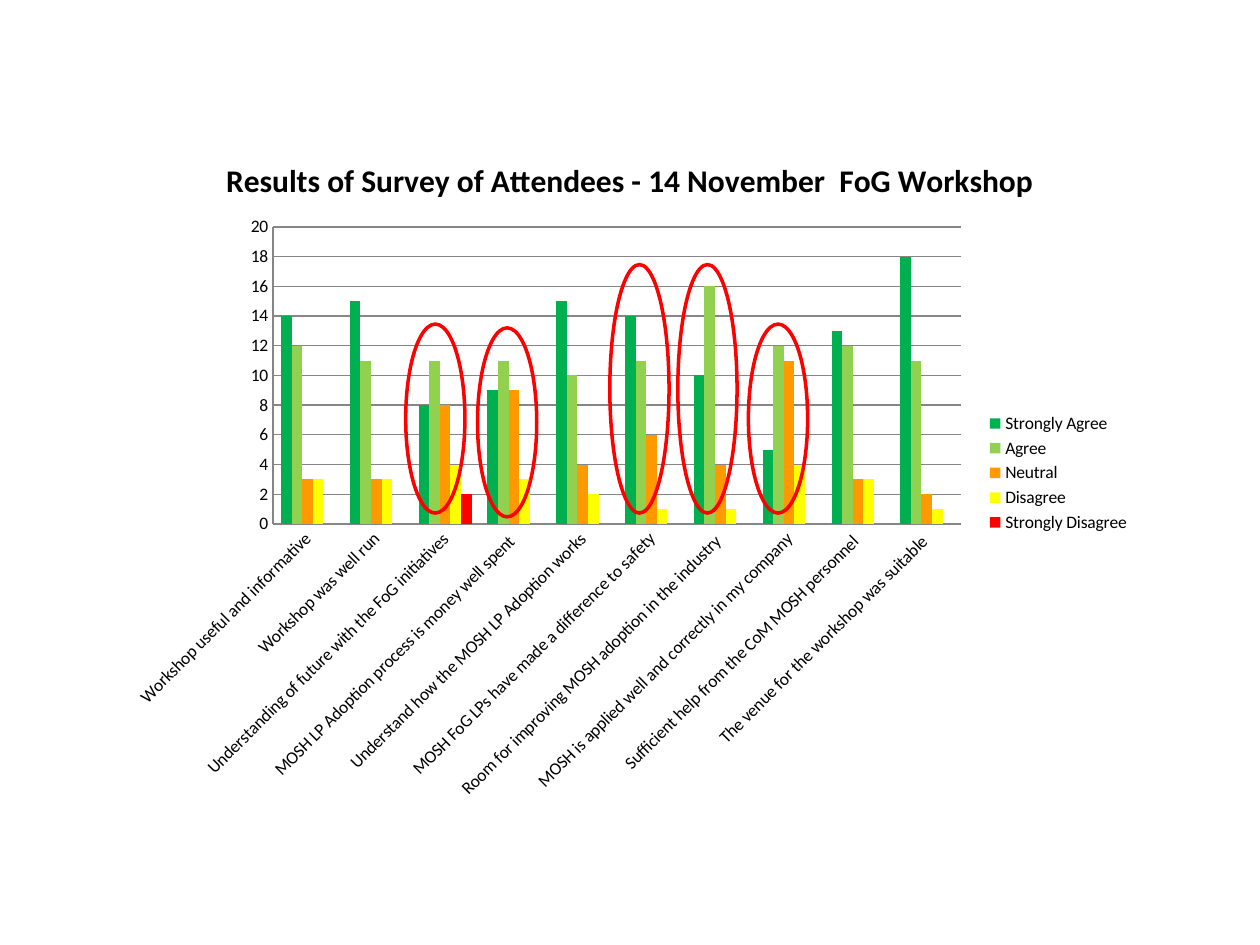
from dataclasses import dataclass

from lxml import etree
from pptx import Presentation
from pptx.chart.data import CategoryChartData
from pptx.dml.color import RGBColor
from pptx.enum import chart as charts, shapes
from pptx.oxml import ns
from pptx.util import Inches, Pt

WIDTH, HEIGHT = Inches(10), Inches(7.5)
FONT = "Calibri"
BLACK = RGBColor(0x00, 0x00, 0x00)
GREY = RGBColor(0x86, 0x86, 0x86)
DARK_GREEN = RGBColor(0x00, 0xB0, 0x50)
LIGHT_GREEN = RGBColor(0x92, 0xD0, 0x50)
ORANGE = RGBColor(0xFF, 0x99, 0x00)
YELLOW = RGBColor(0xFF, 0xFF, 0x00)
RED = RGBColor(0xFF, 0x00, 0x00)


@dataclass(frozen=True)
class Box:
    left: float
    top: float
    width: float
    height: float

    def on_slide(self) -> tuple[int, int, int, int]:
        return (int(self.left * WIDTH), int(self.top * HEIGHT),
                int(self.width * WIDTH), int(self.height * HEIGHT))


@dataclass(frozen=True)
class Answer:
    name: str
    color: RGBColor
    counts: tuple


CHART_BOX = Box(0.093, 0.14, 0.814, 0.721)
PLOT_BOX = Box(0.152, 0.139, 0.671, 0.436)
TITLE = "Results of Survey of Attendees - 14 November  FoG Workshop"
QUESTIONS = (
    "Workshop useful and informative",
    "Workshop was well run",
    "Understanding of future with the FoG initiatives",
    "MOSH LP Adoption process is money well spent ",
    "Understand how the MOSH LP Adoption works",
    "MOSH FoG LPs have made a difference to safety",
    "Room for improving MOSH adoption in the industry ",
    "MOSH is applied well and correctly in my company",
    "Sufficient help from the CoM MOSH personnel ",
    "The venue for the workshop was suitable ",
)
ANSWERS = (
    Answer("Strongly Agree", DARK_GREEN, (14, 15, 8, 9, 15, 14, 10, 5, 13, 18)),
    Answer("Agree", LIGHT_GREEN, (12, 11, 11, 11, 10, 11, 16, 12, 12, 11)),
    Answer("Neutral", ORANGE, (3, 3, 8, 9, 4, 6, 4, 11, 3, 2)),
    Answer("Disagree", YELLOW, (3, 3, 4, 3, 2, 1, 1, 4, 3, 1)),
    Answer("Strongly Disagree", RED, (None, None, 2) + (None,) * 7),
)
SHORT, TALL, RING_WIDTH = 0.2, 0.263, 0.047
RINGS = (
    Box(0.322, 0.343, RING_WIDTH, SHORT),
    Box(0.379, 0.347, RING_WIDTH, SHORT),
    Box(0.538, 0.28, RING_WIDTH, TALL),
    Box(0.594, 0.343, RING_WIDTH, SHORT),
    Box(0.484, 0.28, RING_WIDTH, TALL),
)


def format_font(font, *, size: float = 10, bold: bool = False) -> None:
    font.name = FONT
    font.size = Pt(size)
    font.bold = bold
    font.color.rgb = BLACK


def write_text(frame, content: str, **style) -> None:
    run = frame.paragraphs[0].add_run()
    run.text = content
    format_font(run.font, **style)


def place_plot(chart, box: Box) -> None:
    plot_area = chart.element.find(".//" + ns.qn("c:plotArea"))
    for layout in plot_area.findall(ns.qn("c:layout")):
        plot_area.remove(layout)
    layout = etree.Element(ns.qn("c:layout"))
    manual = etree.SubElement(layout, ns.qn("c:manualLayout"))
    settings = (("layoutTarget", "inner"), ("xMode", "edge"), ("yMode", "edge"),
                ("x", box.left), ("y", box.top), ("w", box.width), ("h", box.height))
    for name, value in settings:
        etree.SubElement(manual, ns.qn(f"c:{name}")).set("val", str(value))
    plot_area.insert(0, layout)


def format_axes(chart) -> None:
    for axis in (chart.category_axis, chart.value_axis):
        axis.major_tick_mark = charts.XL_TICK_MARK.NONE
        axis.minor_tick_mark = charts.XL_TICK_MARK.NONE
        axis.format.line.color.rgb = GREY
        axis.format.line.width = Pt(0.75)
        format_font(axis.tick_labels.font)
    labels = chart.category_axis._element.find(
        f"{ns.qn('c:txPr')}/{ns.qn('a:bodyPr')}")
    labels.set("rot", str(-45 * 60000))
    labels.set("vert", "horz")
    values = chart.value_axis
    values.minimum_scale, values.maximum_scale, values.major_unit = 0, 20, 2
    values.has_major_gridlines = True
    values.major_gridlines.format.line.color.rgb = GREY
    values.major_gridlines.format.line.width = Pt(0.75)


def add_survey_chart(slide) -> None:
    data = CategoryChartData(number_format="General")
    data.categories = QUESTIONS
    for answer in ANSWERS:
        data.add_series(answer.name, answer.counts)
    chart = slide.shapes.add_chart(
        charts.XL_CHART_TYPE.COLUMN_CLUSTERED, *CHART_BOX.on_slide(), data).chart
    format_font(chart.font)
    chart.has_title = True
    write_text(chart.chart_title.text_frame, TITLE, size=18, bold=True)
    chart.chart_title.include_in_layout = False
    chart.has_legend = True
    chart.legend.position = charts.XL_LEGEND_POSITION.RIGHT
    chart.legend.include_in_layout = False
    format_font(chart.legend.font)
    plot = chart.plots[0]
    plot.vary_by_categories = False
    plot.gap_width, plot.overlap = 150, 0
    for series, answer in zip(plot.series, ANSWERS):
        series.format.fill.solid()
        series.format.fill.fore_color.rgb = answer.color
        series.invert_if_negative = False
    format_axes(chart)
    place_plot(chart, PLOT_BOX)


def add_ring(slide, box: Box) -> None:
    ring = slide.shapes.add_shape(shapes.MSO_SHAPE.OVAL, *box.on_slide())
    ring.shadow.inherit = False
    ring.fill.background()
    ring.line.color.rgb = RED
    ring.line.width = Pt(2)


def main() -> None:
    presentation = Presentation()
    presentation.slide_width, presentation.slide_height = WIDTH, HEIGHT
    slide = presentation.slides.add_slide(presentation.slide_layouts[6])
    add_survey_chart(slide)
    for ring in RINGS:
        add_ring(slide, ring)
    presentation.save("out.pptx")


if __name__ == "__main__":
    main()
